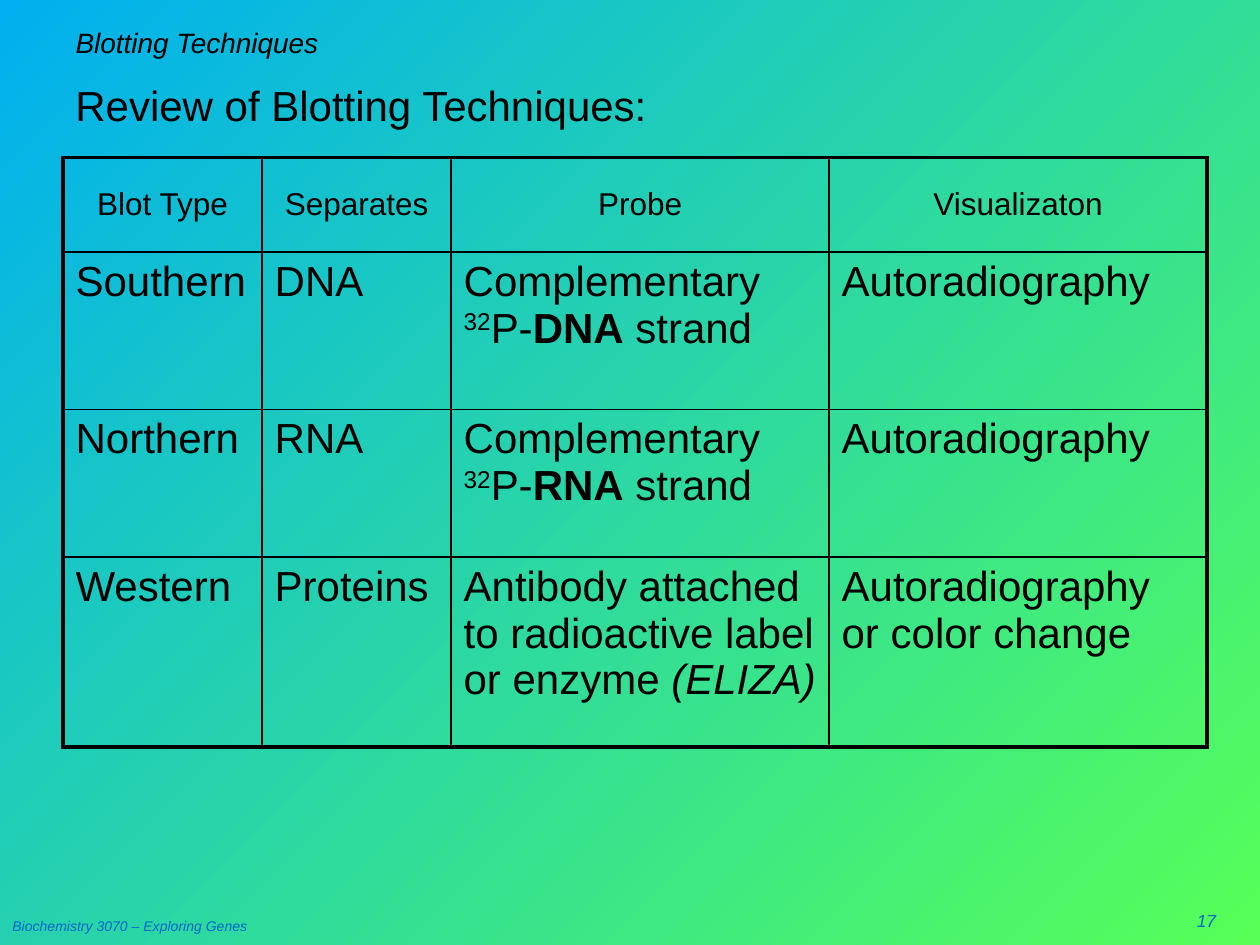
import dataclasses

import pptx
import pptx.dml.color
import pptx.enum.text
import pptx.oxml
import pptx.oxml.ns
import pptx.util
from pptx.util import Inches

ALIGN = pptx.enum.text.PP_ALIGN
ANCHOR = pptx.enum.text.MSO_ANCHOR


@dataclasses.dataclass(frozen=True)
class Theme:
    font: str = "Arial"
    ink: str = "000000"
    accent: str = "0066CC"
    bg_start: str = "00B0F0"
    bg_end: str = "57FF57"
    title: int = 16
    body: int = 24
    header: int = 18
    footer: int = 8
    number: int = 10
    outer_line: float = 2.25
    inner_line: float = 1


THEME = Theme()

HEADERS = ["Blot Type", "Separates", "Probe", "Visualizaton"]


def probe_runs(acid):
    return [("Complementary ", ""), ("32", "super"), ("P-", ""),
            (acid, "bold"), (" strand", "")]


ROWS = [
    ["Southern", "DNA", probe_runs("DNA"), "Autoradiography"],
    ["Northern", "RNA", probe_runs("RNA"), "Autoradiography"],
    ["Western", "Proteins",
     [("Antibody attached to radioactive label or enzyme ", ""), ("(ELIZA)", "italic")],
     "Autoradiography or color change"],
]


def rgb(value):
    return pptx.dml.color.RGBColor.from_string(value)


def write(tf, content, size, color=THEME.ink, align=ALIGN.LEFT, italic=None):
    """Fill a text frame with a string or a list of (text, style) runs."""
    p = tf.paragraphs[0]
    p.alignment = align
    p.font.name = THEME.font
    p.font.size = pptx.util.Pt(size)
    p.font.color.rgb = rgb(color)
    p.font.italic = italic
    runs = [(content, "")] if isinstance(content, str) else content
    for text, style in runs:
        r = p.add_run()
        r.text = text
        if style == "bold":
            r.font.bold = True
        elif style == "italic":
            r.font.italic = True
        elif style == "super":
            r.font._element.set("baseline", "30000")


def add_text(s, box, content, size, **style):
    sp = s.shapes.add_textbox(*map(Inches, box))
    sp.text_frame.word_wrap = True
    write(sp.text_frame, content, size, **style)


def paint_background(s):
    fill = s.background.fill
    fill.gradient()
    fill.gradient_angle = 315
    for stop, color in zip(fill.gradient_stops, (THEME.bg_start, THEME.bg_end)):
        stop.color.rgb = rgb(color)


def place_title(s, box, text):
    sp = s.shapes.title
    sp.left, sp.top, sp.width, sp.height = map(Inches, box)
    tf = sp.text_frame
    tf.auto_size = pptx.enum.text.MSO_AUTO_SIZE.NONE
    tf.vertical_anchor = ANCHOR.MIDDLE
    write(tf, text, THEME.title, italic=True)


def set_borders(cell, widths):
    """Draw the left, right, top and bottom borders, widths in points."""
    tc_pr = cell._tc.get_or_add_tcPr()
    for i, (side, width) in enumerate(zip("LRTB", widths)):
        line = pptx.oxml.parse_xml(
            f'<a:ln{side} {pptx.oxml.ns.nsdecls("a")} w="{pptx.util.Pt(width)}">'
            f'<a:solidFill><a:srgbClr val="{THEME.ink}"/></a:solidFill></a:ln{side}>')
        tc_pr.insert(i, line)


def add_blot_table(s, box, col_widths, row_heights):
    grid = [HEADERS] + ROWS
    n_rows, n_cols = len(grid), len(HEADERS)
    table = s.shapes.add_table(n_rows, n_cols, *map(Inches, box)).table
    table.first_row = table.horz_banding = False
    for col, width in zip(table.columns, col_widths):
        col.width = Inches(width)
    for row, height in zip(table.rows, row_heights):
        row.height = Inches(height)
    for i, contents in enumerate(grid):
        for j, content in enumerate(contents):
            cell = table.cell(i, j)
            cell.fill.background()
            on_edge = (j == 0, j == n_cols - 1, i == 0, i == n_rows - 1)
            set_borders(cell, [THEME.outer_line if edge else THEME.inner_line
                               for edge in on_edge])
            if i == 0:
                cell.vertical_anchor = ANCHOR.MIDDLE
                write(cell.text_frame, content, THEME.header, align=ALIGN.CENTER)
            else:
                write(cell.text_frame, content, THEME.body)


def add_footer(s, label_box, number_box):
    add_text(s, label_box, "Biochemistry 3070 – Exploring Genes", THEME.footer,
             color=THEME.accent, italic=True)
    add_text(s, number_box, "17", THEME.number,
             color=THEME.accent, align=ALIGN.RIGHT, italic=True)


def main():
    prs = pptx.Presentation()
    prs.slide_width, prs.slide_height = Inches(10), Inches(7.5)
    s = prs.slides.add_slide(prs.slide_layouts.get_by_name("Title Only"))
    paint_background(s)
    add_footer(s, (0, 7.23, 2.83, 0.27), (9.17, 7.17, 0.58, 0.33))
    place_title(s, (0.5, 0.17, 9, 0.33), "Blotting Techniques")
    add_text(s, (0.5, 0.58, 8, 0.58), "Review of Blotting Techniques:", THEME.body)
    add_blot_table(s, (0.5, 1.25, 9.08, 4.68),
                   col_widths=(1.58, 1.5, 3, 3), row_heights=(0.75, 1.25, 1.17, 1.51))
    prs.save("out.pptx")


if __name__ == "__main__":
    main()
